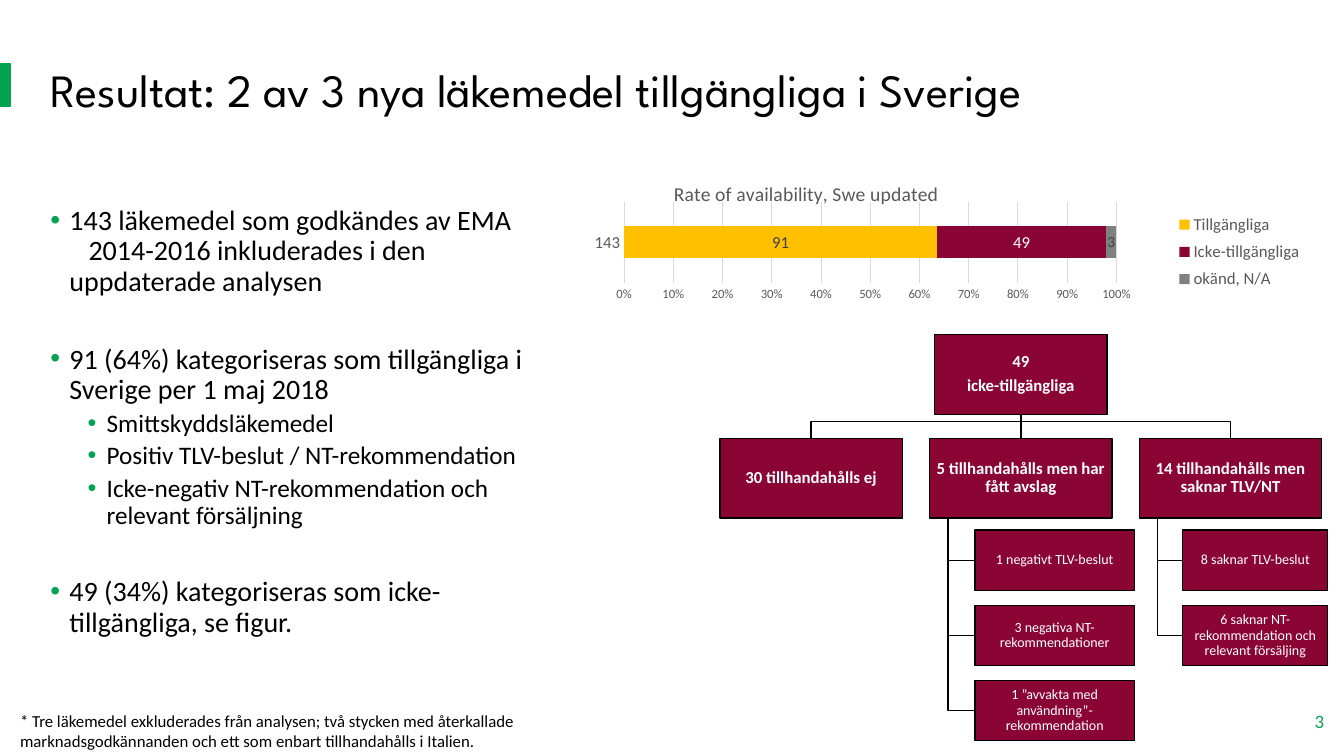
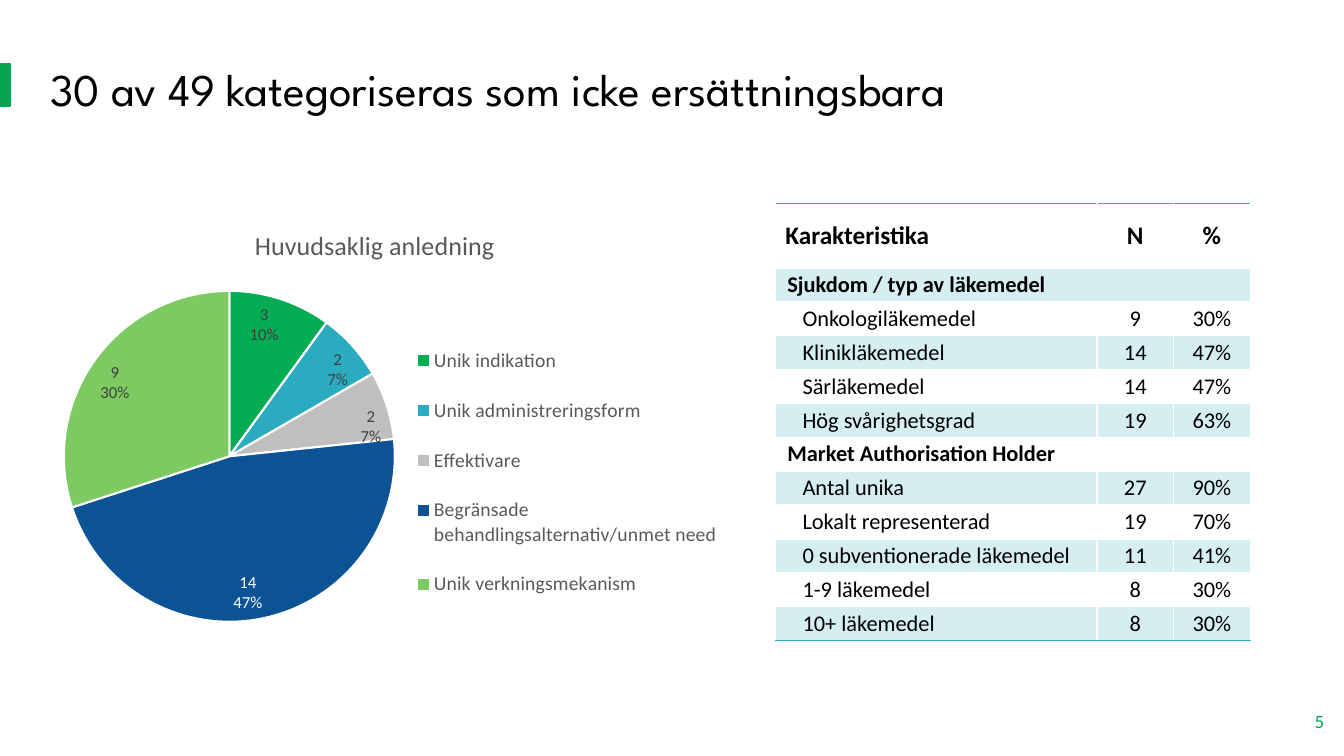
from lxml.etree import SubElement
from pptx import Presentation
from pptx.chart.data import CategoryChartData
from pptx.dml.color import RGBColor
from pptx.enum.chart import (XL_CHART_TYPE, XL_LABEL_POSITION,
                             XL_LEGEND_POSITION, XL_TICK_MARK)
from pptx.enum.shapes import MSO_CONNECTOR, MSO_SHAPE
from pptx.enum.text import MSO_ANCHOR, PP_ALIGN
from pptx.oxml import parse_xml
from pptx.oxml.ns import nsdecls, qn
from pptx.util import Emu, Inches, Pt

GREEN = RGBColor(0x04, 0xA3, 0x52)
BLACK = RGBColor(0x00, 0x00, 0x00)
WHITE = RGBColor(0xFF, 0xFF, 0xFF)
WINE = RGBColor(0x8A, 0x04, 0x34)
YELLOW = RGBColor(0xFF, 0xC0, 0x00)
GREY = RGBColor(0x80, 0x80, 0x80)
TEXT_GREY = RGBColor(0x59, 0x59, 0x59)
LABEL_GREY = RGBColor(0x40, 0x40, 0x40)
RULE_GREY = RGBColor(0xD9, 0xD9, 0xD9)
TEAL = RGBColor(0x2B, 0xAB, 0xBF)
PALE_TEAL = RGBColor(0xD5, 0xEE, 0xF2)
PIE_COLORS = [RGBColor(0x04, 0xAC, 0x54), TEAL, RGBColor(0xBF, 0xBF, 0xBF),
              RGBColor(0x0B, 0x53, 0x94), RGBColor(0x7C, 0xCA, 0x61)]

BODY_FONT = "Calibri"
TITLE_FONT = "League Spartan"
CELL = Inches(0.1)  # side of one grid square: 133.33 columns by 75 rows


def grid(*squares):
    """Turn columns and rows of the grid into lengths."""
    return [Emu(round(n * CELL)) for n in squares]


def style_font(font, size, color, bold=False, name=BODY_FONT):
    font.name, font.size, font.bold = name, Pt(size), bold
    font.color.rgb = color


def add_text(frame, text, *, size, color=BLACK, bold=False, name=BODY_FONT,
             align=PP_ALIGN.LEFT, spacing=1, before=0, after=0,
             bullet_at=None, tab_at=None):
    """Add a paragraph to the frame, using its empty first one if there is one."""
    first = frame.paragraphs[0]
    paragraph = frame.add_paragraph() if first.runs else first
    paragraph.text = text
    paragraph.alignment, paragraph.line_spacing = align, spacing
    paragraph.space_before, paragraph.space_after = Pt(before), Pt(after)
    properties = paragraph._p.get_or_add_pPr()
    if bullet_at is not None:
        hang = Inches(0.19)
        properties.set("marL", str(Inches(bullet_at) + hang))
        properties.set("indent", str(-hang))
        color_part = SubElement(properties, qn("a:buClr"))
        SubElement(color_part, qn("a:srgbClr"), val=str(GREEN))
        SubElement(properties, qn("a:buFont"), typeface="Arial")
        SubElement(properties, qn("a:buChar"), char="•")
    if tab_at is not None:
        tabs = SubElement(properties, qn("a:tabLst"))
        SubElement(tabs, qn("a:tab"), pos=str(Inches(tab_at)), algn="l")
    for run in paragraph.runs:
        style_font(run.font, size, color, bold, name)


def set_layout(part, x, y, w=None, h=None, after=None, inner=False):
    """Place a chart part by shares of the chart's size."""
    for old in part.findall(qn("c:layout")):
        part.remove(old)
    values = [("layoutTarget", "inner")] if inner else []
    values += [("xMode", "edge"), ("yMode", "edge"), ("x", x), ("y", y)]
    values += [("w", w), ("h", h)] if w else []
    rows = "".join(f'<c:{tag} val="{value}"/>' for tag, value in values)
    layout = parse_xml(f'<c:layout {nsdecls("c")}><c:manualLayout>{rows}'
                       '</c:manualLayout></c:layout>')
    part.insert(part.index(part.find(qn(after))) + 1 if after else 0, layout)


def set_border(cell, side):
    line = parse_xml(f'<a:{side} {nsdecls("a")} w="12700"><a:solidFill>'
                     f'<a:srgbClr val="{TEAL}"/></a:solidFill></a:{side}>')
    properties = cell._tc.get_or_add_tcPr()
    properties.insert(len(properties.findall(qn("a:lnT"))), line)


class Deck:
    def __init__(self):
        self.presentation = Presentation()
        self.presentation.slide_width = Inches(13.33)
        self.presentation.slide_height = Inches(7.5)
        self.slide = None

    def start_slide(self, title, number, title_size):
        """Begin a slide with the shared band, title and number."""
        blank = self.presentation.slide_layouts[6]
        self.slide = self.presentation.slides.add_slide(blank)
        self.box(0, 6.3, 1, 4.3, fill=GREEN, line=GREEN)
        add_text(self.text_area(4, 5.8, 118, 6.7, MSO_ANCHOR.MIDDLE), title,
                 size=title_size, name=TITLE_FONT, spacing=0.9)
        add_text(self.text_area(124.2, 69.5, 8.1, 4, MSO_ANCHOR.MIDDLE), number,
                 size=13.5, color=GREEN, align=PP_ALIGN.RIGHT)

    def text_area(self, x, y, w, h, anchor=MSO_ANCHOR.TOP):
        frame = self.slide.shapes.add_textbox(*grid(x, y, w, h)).text_frame
        frame.word_wrap, frame.vertical_anchor = True, anchor
        return frame

    def box(self, x, y, w, h, lines=(), fill=WINE, line=BLACK, size=12, bold=True):
        box = self.slide.shapes.add_shape(MSO_SHAPE.RECTANGLE, *grid(x, y, w, h))
        box.shadow.inherit = False
        box.fill.solid()
        box.fill.fore_color.rgb = fill
        box.line.color.rgb, box.line.width = line, Pt(1)
        frame = box.text_frame
        frame.word_wrap, frame.vertical_anchor = True, MSO_ANCHOR.MIDDLE
        frame.margin_left = frame.margin_right = Inches(0.01)
        frame.margin_top = frame.margin_bottom = Inches(0.01)
        for text in lines:
            add_text(frame, text, size=size, color=WHITE, bold=bold,
                     align=PP_ALIGN.CENTER, spacing=0.9, after=size * 0.35)
        return box

    def join(self, upper, lower):
        """Straight line from the bottom of one box to the top of another."""
        link = self.slide.shapes.add_connector(MSO_CONNECTOR.STRAIGHT, 0, 0, 0, 0)
        link.begin_connect(upper, 2)
        link.end_connect(lower, 0)
        link.line.color.rgb, link.line.width = BLACK, Pt(1)
        SubElement(link._element.spPr, qn("a:effectLst"))

    def bent_line(self, *points):
        builder = self.slide.shapes.build_freeform(*points[0])
        builder.add_line_segments(points[1:], close=False)
        bent = builder.convert_to_shape()
        bent.shadow.inherit = False
        bent.fill.background()
        bent.line.color.rgb, bent.line.width = BLACK, Pt(1)

    def chart(self, kind, at, categories, series, title, title_size, title_at,
              plot_at, legend_size, legend_at):
        data = CategoryChartData()
        data.categories = categories
        for name, values in series:
            data.add_series(name, values)
        chart = self.slide.shapes.add_chart(kind, *grid(*at), data).chart
        style_font(chart.font, 10, BLACK)
        add_text(chart.chart_title.text_frame, title, size=title_size,
                 color=TEXT_GREY)
        chart.has_legend = True
        chart.legend.position = XL_LEGEND_POSITION.RIGHT
        chart.legend.include_in_layout = False
        style_font(chart.legend.font, legend_size, TEXT_GREY)
        set_layout(chart.chart_title._element, *title_at, after="c:tx")
        set_layout(chart.legend._element, *legend_at, after="c:legendPos")
        set_layout(chart._chartSpace.chart.plotArea, *plot_at, inner=True)
        return chart

    def table(self, x, y, widths, heights, rows):
        """First row is the header; a row with one entry is a section heading."""
        table = self.slide.shapes.add_table(
            len(rows), len(widths),
            *grid(x, y, sum(widths), sum(heights))).table
        table.first_row = table.horz_banding = False
        for column, width in zip(table.columns, grid(*widths)):
            column.width = width
        for r, (height, entries) in enumerate(zip(grid(*heights), rows)):
            table.rows[r].height = height
            header, section = r == 0, len(entries) == 1
            for c, cell in enumerate(table.rows[r].cells):
                cell.vertical_anchor = MSO_ANCHOR.MIDDLE
                cell.margin_top = cell.margin_bottom = cell.margin_right = 0
                indent = 0.1 if header else 0.12 if section else 0.27
                cell.margin_left = Inches(0 if c else indent)
                if r % 2:
                    cell.fill.solid()
                    cell.fill.fore_color.rgb = PALE_TEAL
                else:
                    cell.fill.background()
                if header:
                    set_border(cell, "lnT")
                if header or r == len(rows) - 1:
                    set_border(cell, "lnB")
                if c < len(entries):
                    add_text(cell.text_frame, entries[c], size=18 if header else 16,
                             bold=header or section,
                             align=PP_ALIGN.CENTER if c else PP_ALIGN.LEFT)
            if section:
                table.cell(r, 0).merge(table.cell(r, len(widths) - 1))


def availability_slide(deck):
    deck.start_slide("Resultat: 2 av 3 nya läkemedel tillgängliga i Sverige", "3", 33)

    # Findings and footnote
    findings = deck.text_area(4, 20, 51.2, 50)
    main = dict(size=20, spacing=0.9, bullet_at=0)
    add_text(findings, "143 läkemedel som godkändes av EMA\v\t2014-2016 inkluderades "
             "i den uppdaterade analysen", tab_at=0.38, **main)
    add_text(findings, "91 (64%) kategoriseras som tillgängliga i Sverige per "
             "1 maj 2018", before=34, **main)
    for criterion in ("Smittskyddsläkemedel", "Positiv TLV-beslut / NT-rekommendation",
                      "Icke-negativ NT-rekommendation och relevant försäljning"):
        add_text(findings, criterion, size=18, spacing=0.9, before=3.8, bullet_at=0.37)
    add_text(findings, "49 (34%) kategoriseras som icke-tillgängliga, se figur.",
             before=34, **main)
    footnote = deck.text_area(1, 70, 54.2, 5)
    for line in ("* Tre läkemedel exkluderades från analysen; två stycken med återkallade",
                 "marknadsgodkännanden och ett som enbart tillhandahålls i Italien."):
        add_text(footnote, line, size=12)

    # Availability bar
    chart = deck.chart(
        XL_CHART_TYPE.BAR_STACKED_100, (55.8, 13.6, 76.3, 17), ["143"],
        [("Tillgängliga", [91]), ("Icke-tillgängliga", [49]), ("okänd, N/A", [3])],
        "Rate of availability, Swe updated", 14, (0.14, 0.23),
        (0.08, 0.38, 0.64, 0.47), 12, (0.78, 0.41, 0.2, 0.52))
    plot = chart.plots[0]
    plot.vary_by_categories, plot.gap_width, plot.overlap = False, 150, 100
    label_styles = [(YELLOW, LABEL_GREY, 12), (WINE, WHITE, 12), (GREY, LABEL_GREY, 11)]
    for series, (fill, ink, size) in zip(plot.series, label_styles):
        series.format.fill.solid()
        series.format.fill.fore_color.rgb = fill
        series.data_labels.show_value = True
        style_font(series.data_labels.font, size, ink)
    for axis, size in ((chart.category_axis, 12), (chart.value_axis, 9)):
        axis.major_tick_mark = axis.minor_tick_mark = XL_TICK_MARK.NONE
        style_font(axis.tick_labels.font, size, TEXT_GREY)
    shares = chart.value_axis
    shares.maximum_scale, shares.major_unit = 1, 0.1
    shares.tick_labels.number_format = "0%"
    shares.tick_labels.number_format_is_linked = False
    shares.format.line.fill.background()
    for rule in (shares.major_gridlines.format.line, chart.category_axis.format.line):
        rule.color.rgb, rule.width = RULE_GREY, Pt(0.75)

    # Tree of unavailable medicines
    tree = [
        ("30 tillhandahålls ej", 0, 0, []),
        ("5 tillhandahålls men har fått avslag", 4.5, 15.8,
         ["1 negativt TLV-beslut", "3 negativa NT-rekommendationer",
          "1 ”avvakta med användning”-rekommendation"]),
        ("14 tillhandahålls men saknar TLV/NT", 4.3, 14.4,
         ["8 saknar TLV-beslut",
          "6 saknar NT-rekommendation och relevant försäljing"]),
    ]
    root = deck.box(92.7, 33.2, 17.1, 7.9, ["49", "icke-tillgängliga"])
    root_x, root_bottom = root.left + root.width // 2, root.top + root.height
    bend_y, = grid(41.8)
    for i, (group, leaf_shift, leaf_width, leaves) in enumerate(tree):
        left = 71.4 + 20.8 * i
        branch = deck.box(left, 43.5, 18.1, 7.9, [group])
        branch_x = branch.left + branch.width // 2
        if i == 1:
            deck.join(root, branch)
        else:
            deck.bent_line((root_x, root_bottom), (root_x, bend_y),
                           (branch_x, bend_y), (branch_x, branch.top))
        trunk_x = branch.left + branch.width // 10
        for k, reason in enumerate(leaves):
            leaf = deck.box(left + leaf_shift, 52.6 + 7.45 * k, leaf_width, 6,
                            [reason], size=10, bold=False)
            leaf_y = leaf.top + leaf.height // 2
            deck.bent_line((trunk_x, branch.top + branch.height),
                           (trunk_x, leaf_y), (leaf.left, leaf_y))


def reasons_slide(deck):
    deck.start_slide("30 av 49 kategoriseras som icke ersättningsbara", "5", 32.4)

    # Main reasons
    reasons = ["Unik indikation", "Unik administreringsform", "Effektivare",
               "Begränsade behandlingsalternativ/unmet need", "Unik verkningsmekanism"]
    title = "Huvudsaklig anledning"
    chart = deck.chart(
        XL_CHART_TYPE.PIE, (3.6, 20.2, 68.4, 45.6), reasons,
        [(title, [3, 2, 2, 14, 9])], title, 18.6, (0.31, 0.04),
        (0.04, 0.19, 0.48, 0.72), 14, (0.55, 0.26, 0.45, 0.65))
    series = chart.plots[0].series[0]
    labels = series.data_labels
    labels.show_value = labels.show_percentage = True
    labels.position = XL_LABEL_POSITION.INSIDE_END
    style_font(labels.font, 12, LABEL_GREY)
    for i, color in enumerate(PIE_COLORS):
        slice_format = series.points[i].format
        slice_format.fill.solid()
        slice_format.fill.fore_color.rgb = color
        slice_format.line.color.rgb, slice_format.line.width = WHITE, Pt(1.5)
    dark_label = series.points[3].data_label
    style_font(dark_label.font, 12, WHITE)
    dark_label.position = XL_LABEL_POSITION.INSIDE_END
    for percent in list(series._element.iter(qn("c:showPercent"))):
        percent.set("val", "1")
        separator = parse_xml(f'<c:separator {nsdecls("c")}>\n</c:separator>')
        bubble = percent.getparent().find(qn("c:showBubbleSize"))
        (percent if bubble is None else bubble).addnext(separator)

    # Characteristics
    deck.table(76.9, 20.2, [31.9, 7.6, 7.6], [6.4] + [3.36] * 11, [
        ("Karakteristika", "N", "%"),
        ("Sjukdom / typ av läkemedel",),
        ("Onkologiläkemedel", "9", "30%"),
        ("Klinikläkemedel", "14", "47%"),
        ("Särläkemedel", "14", "47%"),
        ("Hög svårighetsgrad", "19", "63%"),
        ("Market Authorisation Holder",),
        ("Antal unika", "27", "90%"),
        ("Lokalt representerad", "19", "70%"),
        ("0 subventionerade läkemedel", "11", "41%"),
        ("1-9 läkemedel", "8", "30%"),
        ("10+ läkemedel", "8", "30%"),
    ])


def main():
    deck = Deck()
    availability_slide(deck)
    reasons_slide(deck)
    deck.presentation.save("out.pptx")


if __name__ == "__main__":
    main()
